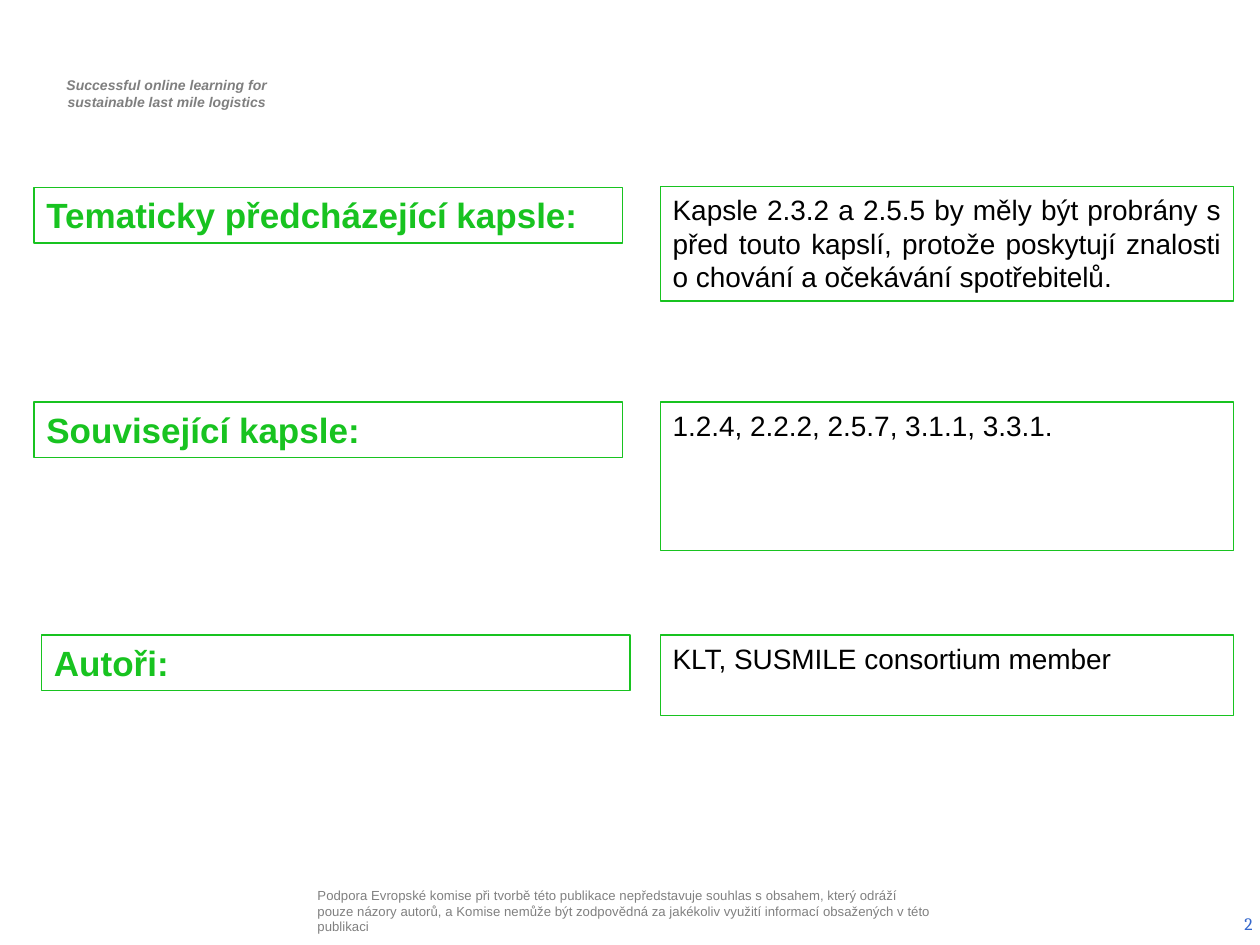
from pptx import Presentation
from pptx.dml.color import RGBColor
from pptx.enum.shapes import MSO_SHAPE
from pptx.enum.text import MSO_ANCHOR, PP_ALIGN
from pptx.util import Inches, Pt

COLORS = {"green": "18C320", "white": "FFFFFF", "black": "000000",
          "tagline": "7F7F7F", "disclaimer": "808080", "number": "3366CC"}


def color(name):
    return RGBColor.from_string(COLORS[name])


def add_text(s, text, left, top, width, height, *, size, ink, font="Arial",
             bold=False, italic=False, align=PP_ALIGN.LEFT,
             anchor=MSO_ANCHOR.TOP, inset=None, indent=0, framed=False):
    """Add a text box, or a white rectangle with a green outline if framed."""
    box = [Inches(v) for v in (left, top, width, height)]
    if framed:
        sp = s.shapes.add_shape(MSO_SHAPE.RECTANGLE, *box)
        sp.shadow.inherit = False
        sp.fill.solid()
        sp.fill.fore_color.rgb = color("white")
        sp.line.color.rgb = color("green")
        sp.line.width = Pt(0.75)
    else:
        sp = s.shapes.add_textbox(*box)
    tf = sp.text_frame
    tf.word_wrap = True
    tf.vertical_anchor = anchor
    if inset is not None:
        tf.margin_left = tf.margin_right = Inches(inset)
        tf.margin_top = tf.margin_bottom = Inches(inset)
    tf.text = text
    for p in tf.paragraphs:
        p.alignment = align
        if indent:
            p._p.get_or_add_pPr().set("marL", str(Inches(indent)))
        for r in p.runs:
            r.font.name = font
            r.font.size = Pt(size)
            r.font.bold = bold
            r.font.italic = italic
            r.font.color.rgb = color(ink)


prs = Presentation()
prs.slide_width, prs.slide_height = Inches(10), Inches(7.5)
s = prs.slides.add_slide(prs.slide_layouts[6])

add_text(s, "Successful online learning for\nsustainable last mile logistics",
         0.29, 0.56, 2.03, 0.37, size=8, ink="tagline", bold=True, italic=True,
         align=PP_ALIGN.CENTER, indent=0.04)
add_text(s, "Podpora Evropské komise při tvorbě této publikace nepředstavuje "
         "souhlas s obsahem, který odráží pouze názory autorů, a Komise nemůže "
         "být zodpovědná za jakékoliv využití informací obsažených v této publikaci",
         2.48, 6.98, 4.96, 0.5, size=7.5, ink="disclaimer",
         anchor=MSO_ANCHOR.MIDDLE, inset=0.04)
add_text(s, "2", 7.71, 7.13, 2.33, 0.4, size=10, ink="number", font="Cambria",
         align=PP_ALIGN.RIGHT, anchor=MSO_ANCHOR.MIDDLE)

# heading, its left and top; content, its top, height and alignment
rows = [
    ("Tematicky předcházející kapsle:", 0.27, 1.49,
     "Kapsle 2.3.2 a 2.5.5 by měly být probrány s před touto kapslí, "
     "protože poskytují znalosti o chování a očekávání spotřebitelů.",
     1.48, 0.91, PP_ALIGN.JUSTIFY),
    ("Související kapsle:", 0.27, 3.19,
     "1.2.4, 2.2.2, 2.5.7, 3.1.1, 3.3.1.", 3.19, 1.18, PP_ALIGN.JUSTIFY),
    ("Autoři:", 0.33, 5.04,
     "KLT, SUSMILE consortium member", 5.04, 0.64, PP_ALIGN.LEFT),
]
for heading, left, top, content, content_top, height, align in rows:
    add_text(s, heading, left, top, 4.67, 0.44, size=20, ink="green",
             bold=True, framed=True)
    add_text(s, content, 5.24, content_top, 4.55, height, size=16, ink="black",
             align=align, framed=True)

prs.save("out.pptx")
